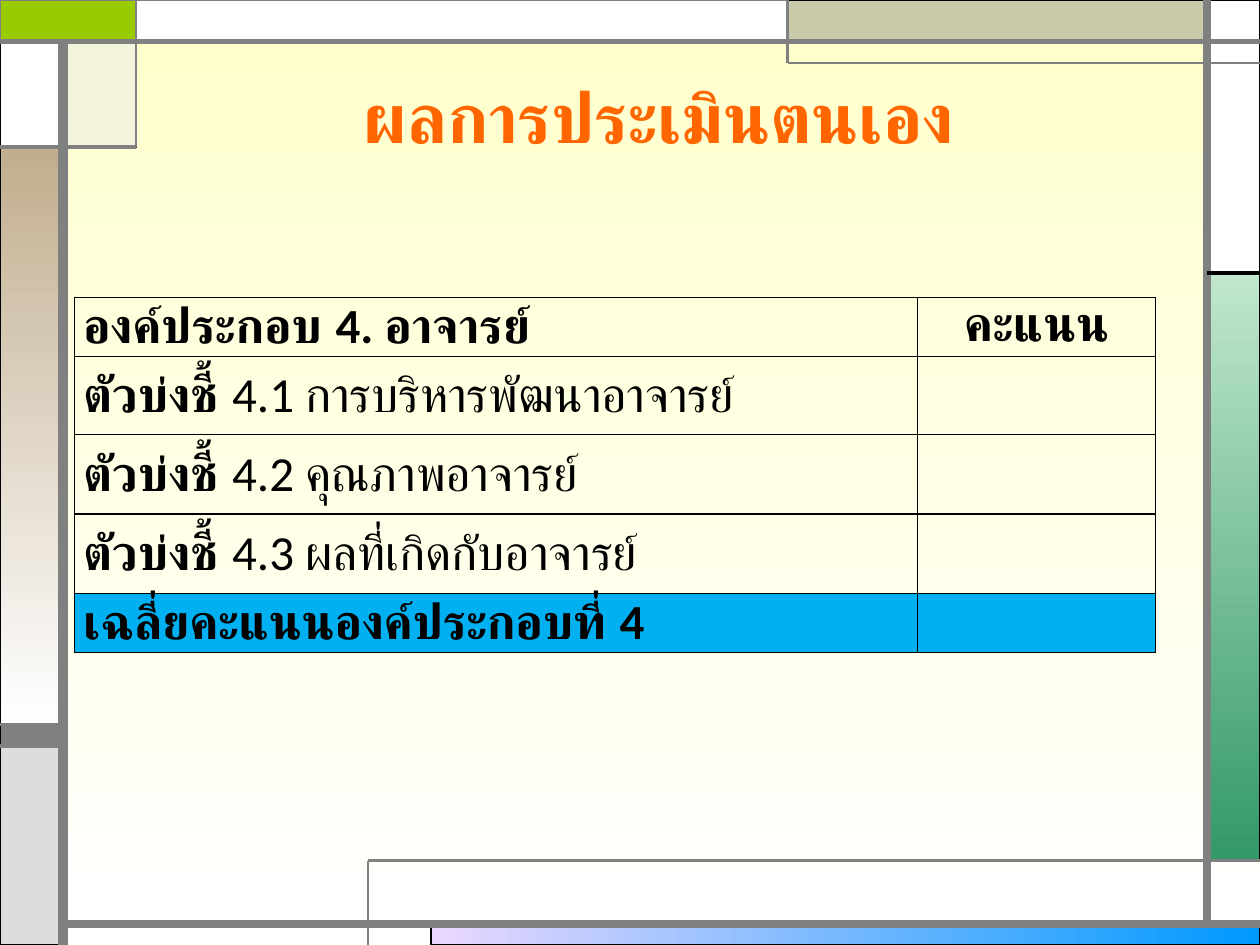
from lxml.etree import SubElement
from pptx import Presentation
from pptx.dml.color import RGBColor
from pptx.enum.shapes import MSO_CONNECTOR, MSO_SHAPE
from pptx.enum.text import MSO_ANCHOR, PP_ALIGN
from pptx.oxml.ns import qn
from pptx.util import Inches, Pt

BLACK = RGBColor(0x00, 0x00, 0x00)
WHITE = RGBColor(0xFF, 0xFF, 0xFF)
GRAY = RGBColor(0x80, 0x80, 0x80)
SILVER = RGBColor(0xDD, 0xDD, 0xDD)
PALE = RGBColor(0xEA, 0xEA, 0xEA)
KHAKI = RGBColor(0xCA, 0xC9, 0xAA)
LIME = RGBColor(0x99, 0xCC, 0x00)
CREAM = RGBColor(0xFF, 0xFF, 0xCC)
LILAC = RGBColor(0xEB, 0xD7, 0xFF)
BLUE = RGBColor(0x00, 0x99, 0xFF)
MINT = RGBColor(0xC1, 0xE7, 0xCE)
GREEN = RGBColor(0x33, 0x99, 0x66)
TAN = RGBColor(0xC1, 0xAE, 0x8F)
ORANGE = RGBColor(0xFF, 0x66, 0x00)
CYAN = RGBColor(0x00, 0xB0, 0xF0)

FONT = "Calibri"
TITLE = "ผลการประเมินตนเอง"
ROWS = [
    (0.47, [("องค์ประกอบ 4. อาจารย์", True)], "คะแนน"),
    (0.62, [("ตัวบ่งชี้ ", True), ("4.1 การบริหารพัฒนาอาจารย์", False)], ""),
    (0.63, [("ตัวบ่งชี้ ", True), ("4.2 คุณภาพอาจารย์", False)], ""),
    (0.63, [("ตัวบ่งชี้ ", True), ("4.3 ผลที่เกิดกับอาจารย์", False)], ""),
    (0.47, [("เฉลี่ยคะแนนองค์ประกอบที่ 4", True)], ""),
]
COLS = [6.69, 1.89]

WIDE, HIGH = 10, 7.5
LEFT, RIGHT = 0.5, 9.58
TOP, BASE = 0.33, 7.33
TAB, NOTCH = 1.08, 1.17
MID, SIDE = 6.25, 2.17
BAND, STEP = 5.75, 5.92
FOOT, INSET = 6.83, 2.92

BOXES = [
    (3.42, BASE, WIDE, HIGH, (LILAC, BLUE, 0), BLACK, 0.75),
    (RIGHT, SIDE, WIDE, FOOT, (MINT, GREEN, 270), BLACK, 0.75),
    (0, BAND, LEFT, STEP, GRAY, BLACK, 0.75),
    (0, STEP, LEFT, HIGH, SILVER, BLACK, 0.75),
    (RIGHT, 0, WIDE, SIDE, WHITE, BLACK, 0.75),
    (MID, 0, RIGHT, TOP, KHAKI, BLACK, 0.75),
    (LEFT, TOP, TAB, NOTCH, PALE, BLACK, 0.75),
    (0, NOTCH, LEFT, BAND, (TAN, WHITE, 270), BLACK, 0.75),
    (0, TOP, LEFT, NOTCH, WHITE, BLACK, 0.75),
    (0, 0, TAB, TOP, LIME, GRAY, 1.5),
    (TAB, 0, MID, TOP, WHITE, GRAY, 0.75),
]
LINES = [
    (LEFT, HIGH, LEFT, TOP, GRAY, 6),
    (LEFT, BASE, WIDE, BASE, GRAY, 4.5),
    (RIGHT, BASE, RIGHT, 0, GRAY, 4.5),
    (0, TOP, WIDE, TOP, GRAY, 3),
    (WIDE, 0.5, MID, 0.5, GRAY, 1.5),
    (MID, 0.5, MID, 0, GRAY, 1.5),
    (RIGHT, SIDE, WIDE, SIDE, BLACK, 2.25),
    (TAB, 0, TAB, NOTCH, GRAY, 1.5),
    (TAB, NOTCH, 0, NOTCH, GRAY, 2.25),
    (INSET, HIGH, INSET, FOOT, GRAY, 1.5),
    (INSET, FOOT, WIDE, FOOT, GRAY, 1.5),
    (LEFT, BAND, 0, BAND, GRAY, 2.25),
    (LEFT, STEP, 0, STEP, GRAY, 2.25),
]


def blend(fill, start, end, angle):
    fill.gradient()
    fill.gradient_angle = angle
    for stop, color in zip(fill.gradient_stops, (start, end)):
        stop.color.rgb = color


def paint(fill, color):
    fill.solid()
    fill.fore_color.rgb = color


def style(font, size, color, bold=None):
    font.name, font.size, font.bold = FONT, Pt(size), bold
    font.color.rgb = color


def add_box(slide, left, top, right, base, color, edge, width):
    box = slide.shapes.add_shape(
        MSO_SHAPE.RECTANGLE, Inches(left), Inches(top),
        Inches(right - left), Inches(base - top))
    box.shadow.inherit = False
    if isinstance(color, RGBColor):
        paint(box.fill, color)
    else:
        blend(box.fill, *color)
    if color == PALE:
        tint = box.fill._xPr.find(".//" + qn("a:srgbClr"))
        SubElement(tint, qn("a:alpha"), val="50000")
    box.line.color.rgb = edge
    box.line.width = Pt(width)


def add_line(slide, x1, y1, x2, y2, color, width):
    line = slide.shapes.add_connector(
        MSO_CONNECTOR.STRAIGHT, Inches(x1), Inches(y1), Inches(x2), Inches(y2))
    line.line.color.rgb = color
    line.line.width = Pt(width)
    SubElement(line._element.spPr, qn("a:effectLst"))


def add_title(slide):
    box = slide.shapes.add_textbox(
        Inches(0.98), Inches(0.29), Inches(8.5), Inches(1.25))
    frame = box.text_frame
    frame.word_wrap = True
    frame.vertical_anchor = MSO_ANCHOR.MIDDLE
    par = frame.paragraphs[0]
    par.text = TITLE
    par.alignment = PP_ALIGN.CENTER
    style(par.font, 40, ORANGE, True)


def set_cell(cell, runs, align, color):
    cell.margin_left = cell.margin_right = Inches(0.07)
    cell.margin_top = cell.margin_bottom = 0
    cell.vertical_anchor = MSO_ANCHOR.MIDDLE
    par = cell.text_frame.paragraphs[0]
    par.alignment = align
    style(par.font, 28, BLACK)
    for text, bold in runs:
        run = par.add_run()
        run.text = text
        style(run.font, 28, BLACK, bold)
    props = cell._tc.get_or_add_tcPr()
    for side in ("lnL", "lnR", "lnT", "lnB"):
        edge = SubElement(props, qn("a:" + side), w=str(Pt(1)))
        fill = SubElement(edge, qn("a:solidFill"))
        SubElement(fill, qn("a:srgbClr"), val=str(BLACK))
    if color:
        paint(cell.fill, color)
    else:
        cell.fill.background()


def add_grid(slide):
    high = sum(row[0] for row in ROWS)
    grid = slide.shapes.add_table(
        len(ROWS), len(COLS), Inches(0.59), Inches(2.36),
        Inches(sum(COLS)), Inches(high)).table
    grid.first_row = grid.horz_banding = False
    for col, width in zip(grid.columns, COLS):
        col.width = Inches(width)
    for i, (height, runs, score) in enumerate(ROWS):
        grid.rows[i].height = Inches(height)
        color = CYAN if i == len(ROWS) - 1 else None
        marks = [(score, True)] if score else []
        set_cell(grid.cell(i, 0), runs, PP_ALIGN.LEFT, color)
        set_cell(grid.cell(i, 1), marks, PP_ALIGN.CENTER, color)


def main():
    deck = Presentation()
    deck.slide_width, deck.slide_height = Inches(WIDE), Inches(HIGH)
    slide = deck.slides.add_slide(deck.slide_layouts[6])
    blend(slide.background.fill, CREAM, WHITE, 270)
    for box in BOXES:
        add_box(slide, *box)
    for line in LINES:
        add_line(slide, *line)
    add_title(slide)
    add_grid(slide)
    deck.save("out.pptx")


if __name__ == "__main__":
    main()
